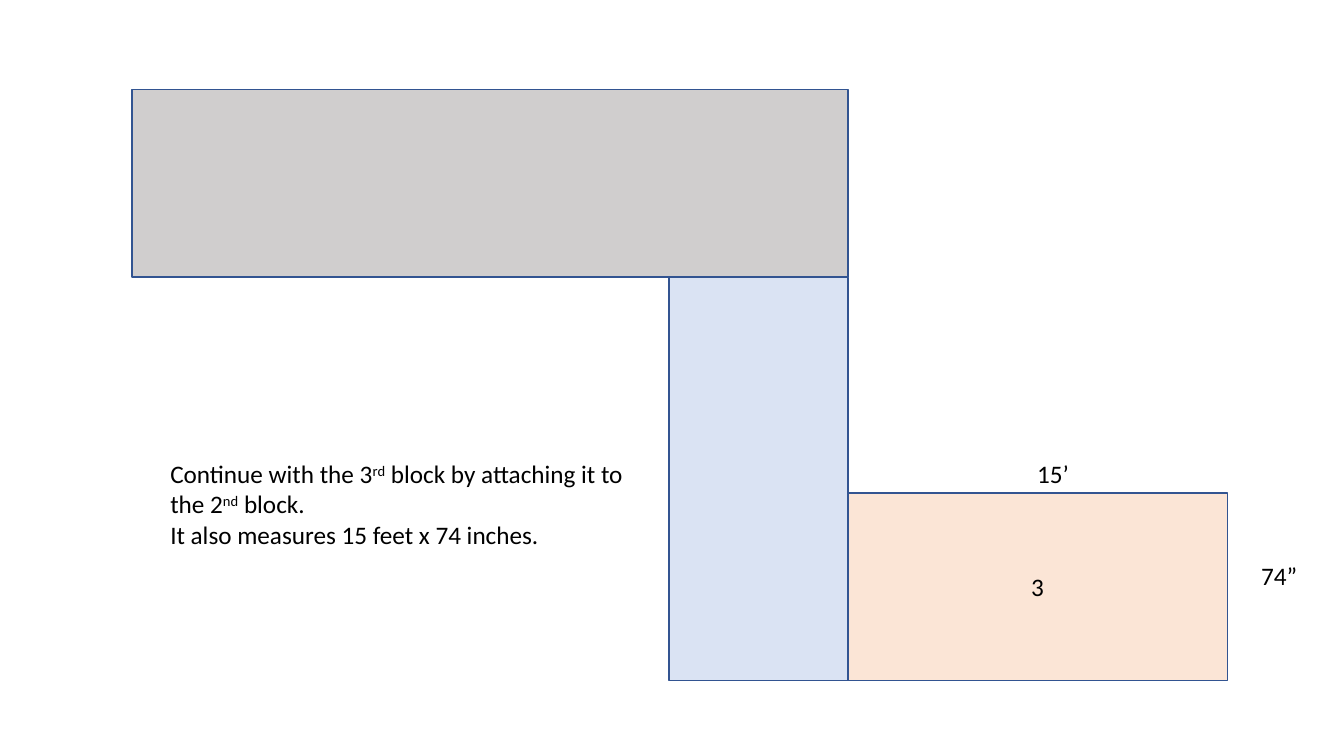
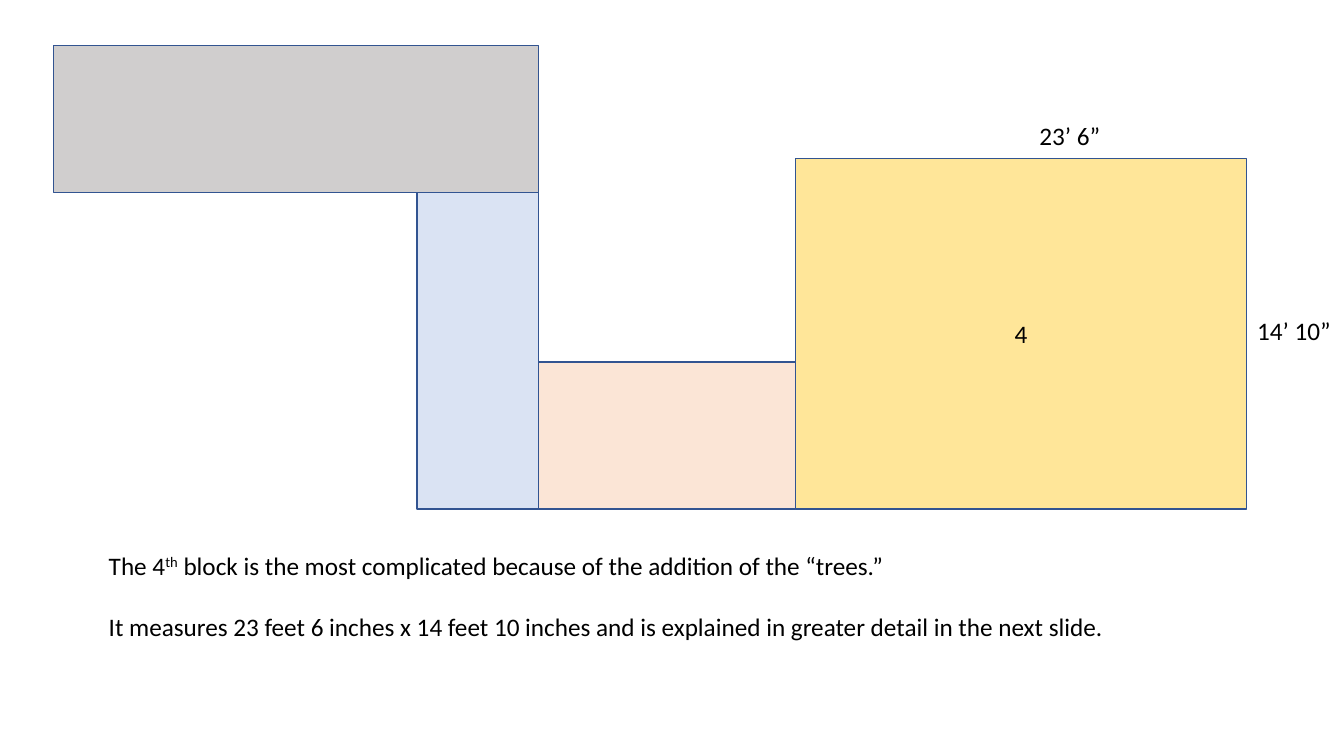
from pptx import Presentation
from pptx.dml.color import RGBColor
from pptx.enum.shapes import MSO_SHAPE as Shape
from pptx.enum.text import MSO_ANCHOR as Anchor, MSO_AUTO_SIZE as Fit, PP_ALIGN as Align
from pptx.util import Inches, Pt

WIDE, HIGH = Inches(13.33), Inches(7.5)
COL, ROW = WIDE / 100, HIGH / 100
FONT, SIZE = "Calibri", Pt(18)
BLACK = RGBColor(0x00, 0x00, 0x00)
EDGE = RGBColor(0x32, 0x54, 0x91)
GREY = RGBColor(0xD0, 0xCE, 0xCE)
BLUE = RGBColor(0xDA, 0xE3, 0xF3)
PEACH = RGBColor(0xFB, 0xE5, 0xD6)
GOLD = RGBColor(0xFF, 0xE6, 0x99)

BLOCKS = [
    (GREY, 0, 0, 1, 1),
    (BLUE, 0.75, 1, 0.25, 2.15),
    (PEACH, 1, 2.15, 0.53, 1),
    (GOLD, 1.53, 0.77, 0.93, 2.38),
]

STEPS = [
    {
        "count": 3,
        "plan": (9.83, 11.87, 53.26, 24.8),
        "note": (11.93, 60, 36.23, 13.47),
        "lines": ["Continue with the 3^rd^ block by attaching it to",
                  "the 2^nd^ block.",
                  "It also measures 15 feet x 74 inches."],
        "gap": 0,
        "sizes": [("15’", (76.44, 60, 3.9, 5.33)),
                  ("74”", (93.1, 73.47, 4.2, 5.33))],
    },
    {
        "count": 4,
        "plan": (3.98, 6, 36.08, 19.47),
        "note": (7.35, 72.13, 76.44, 13.47),
        "lines": ["The 4^th^ block is the most complicated because of the addition of the “trees.”",
                  "It measures 23 feet 6 inches x 14 feet 10 inches and is explained in greater detail in the next slide."],
        "gap": 22,
        "sizes": [("23’ 6”", (76.59, 15.2, 6.08, 5.33)),
                  ("14’ 10”", (92.8, 41.07, 7.05, 5.33))],
    },
]


def scale(box):
    x, y, w, h = box
    return [round(v) for v in (x * COL, y * ROW, w * COL, h * ROW)]


def style(run):
    run.font.name, run.font.size = FONT, SIZE
    run.font.color.rgb = BLACK


def draw_plan(slide, box, count):
    left, top, w, h = box
    group = slide.shapes.add_group_shape()
    for color, x, y, across, down in BLOCKS[:count]:
        area = scale((left + x * w, top + y * h, across * w, down * h))
        block = group.shapes.add_shape(Shape.RECTANGLE, *area)
        block.shadow.inherit = False
        block.fill.solid()
        block.fill.fore_color.rgb = color
        block.line.color.rgb = EDGE
        block.line.width = Pt(1)
    frame = block.text_frame
    frame.text = str(count)
    frame.vertical_anchor = Anchor.MIDDLE
    para = frame.paragraphs[0]
    para.alignment = Align.CENTER
    style(para.runs[0])


def add_text(slide, box, lines, gap=0):
    frame = slide.shapes.add_textbox(*scale(box)).text_frame
    frame.word_wrap = False
    frame.auto_size = Fit.SHAPE_TO_FIT_TEXT
    for row, line in enumerate(lines):
        para = frame.add_paragraph() if row else frame.paragraphs[0]
        if row and gap:
            para.space_before = Pt(gap)
        for part, words in enumerate(line.split("^")):
            run = para.add_run()
            run.text = words
            style(run)
            if part % 2:
                run._r.get_or_add_rPr().set("baseline", "30000")


def add_step(deck, step):
    slide = deck.slides.add_slide(deck.slide_layouts[6])
    draw_plan(slide, step["plan"], step["count"])
    add_text(slide, step["note"], step["lines"], step["gap"])
    for words, box in step["sizes"]:
        add_text(slide, box, [words])


def main():
    deck = Presentation()
    deck.slide_width, deck.slide_height = WIDE, HIGH
    for step in STEPS:
        add_step(deck, step)
    deck.save("out.pptx")


if __name__ == "__main__":
    main()
